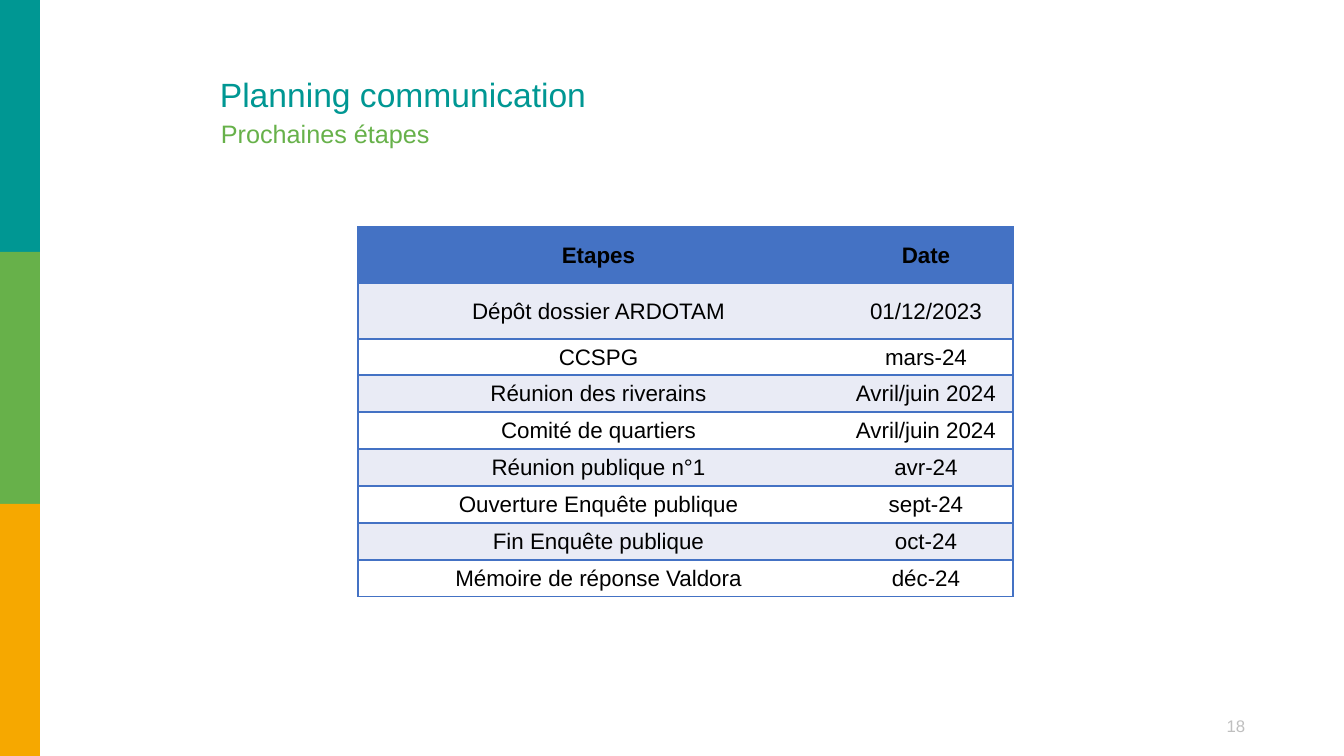
from dataclasses import dataclass
from lxml.etree import SubElement as Sub
from pptx import Presentation as Deck
from pptx.dml.color import RGBColor as Rgb
from pptx.enum.shapes import MSO_SHAPE as Kind
from pptx.enum.text import MSO_ANCHOR as Anchor, PP_ALIGN as Align
from pptx.oxml.ns import qn
from pptx.util import Emu, Pt

SCALE = 914400 / 100.8
TEAL, GREEN, AMBER = "009793", "67B14A", "F6A800"
BLUE, PALE, WHITE, BLACK, GREY = "4472C4", "E9EBF5", "FFFFFF", "000000", "BFBFBF"
PLAIN = "{2D5ABB26-0587-4C30-8999-92F81FD0307C}"
STEPS = [
    ("Etapes", "Date"),
    ("Dépôt dossier ARDOTAM", "01/12/2023"),
    ("CCSPG", "mars-24"),
    ("Réunion des riverains", "Avril/juin 2024"),
    ("Comité de quartiers", "Avril/juin 2024"),
    ("Réunion publique n°1", "avr-24"),
    ("Ouverture Enquête publique", "sept-24"),
    ("Fin Enquête publique", "oct-24"),
    ("Mémoire de réponse\u00a0Valdora", "déc-24"),
]
WIDTHS = [481, 174]
HEIGHTS = [56, 56, 36] + [37] * 6


@dataclass
class Label:
    text: str
    box: tuple
    size: int
    tint: str
    align: Align = Align.LEFT
    lead: float = 1.0


LABELS = [
    Label("18", (1209, 711, 54, 30), 12, GREY, Align.CENTER),
    Label("Planning communication", (210, 74, 753, 40), 24, TEAL, lead=0.9),
    Label("Prochaines étapes", (211, 117, 1078, 40), 18, GREEN, lead=0.9),
]


def px(num: int) -> Emu:
    return Emu(round(num * SCALE))


def tone(code: str) -> Rgb:
    return Rgb.from_string(code)


def apply(item, form: dict) -> None:
    for name, value in form.items():
        setattr(item, name, value)


def write(frame, text: str, size: int, tint: str, form: dict, bold: bool = False) -> None:
    para = frame.paragraphs[0]
    apply(para, form)
    run = para.add_run()
    run.text = text
    apply(run.font, {"name": "Arial", "size": Pt(size), "bold": bold})
    run.font.color.rgb = tone(tint)


def band(slide, top: int, tint: str) -> None:
    bar = slide.shapes.add_shape(Kind.RECTANGLE, 0, px(top), px(40), px(252))
    bar.shadow.inherit = False
    bar.fill.solid()
    bar.fill.fore_color.rgb = tone(tint)
    bar.line.fill.background()


def label(slide, item: Label) -> None:
    frame = slide.shapes.add_textbox(*map(px, item.box)).text_frame
    frame.word_wrap = True
    write(frame, item.text, item.size, item.tint,
          {"alignment": item.align, "line_spacing": item.lead})


def edge(cell, sides: str) -> None:
    props = cell._tc.get_or_add_tcPr()
    for side in sides:
        line = Sub(props, qn(f"a:ln{side}"), w=str(Pt(1)))
        fill = Sub(line, qn("a:solidFill"))
        Sub(fill, qn("a:srgbClr"), val=BLUE)


def plan(slide) -> None:
    box = map(px, (358, 227, sum(WIDTHS), sum(HEIGHTS)))
    grid = slide.shapes.add_table(len(STEPS), len(WIDTHS), *box).table
    grid._tbl.tblPr.find(qn("a:tableStyleId")).text = PLAIN
    for col, width in zip(grid.columns, WIDTHS):
        col.width = px(width)
    for row, (high, texts) in enumerate(zip(HEIGHTS, STEPS)):
        grid.rows[row].height = px(high)
        tint = BLUE if row == 0 else PALE if row % 2 else WHITE
        for col, text in enumerate(texts):
            cell = grid.cell(row, col)
            apply(cell, {"vertical_anchor": Anchor.MIDDLE, "margin_left": px(1),
                         "margin_right": px(1), "margin_top": px(1), "margin_bottom": 0})
            edge(cell, ("LTB", "RTB")[col])
            cell.fill.solid()
            cell.fill.fore_color.rgb = tone(tint)
            write(cell.text_frame, text, 16, BLACK, {"alignment": Align.CENTER}, row == 0)


def main() -> None:
    deck = Deck()
    apply(deck, {"slide_width": px(1344), "slide_height": px(756)})
    slide = deck.slides.add_slide(deck.slide_layouts[6])
    for spot, tint in enumerate((TEAL, GREEN, AMBER)):
        band(slide, spot * 252, tint)
    for item in LABELS:
        label(slide, item)
    plan(slide)
    deck.save("out.pptx")


if __name__ == "__main__":
    main()
